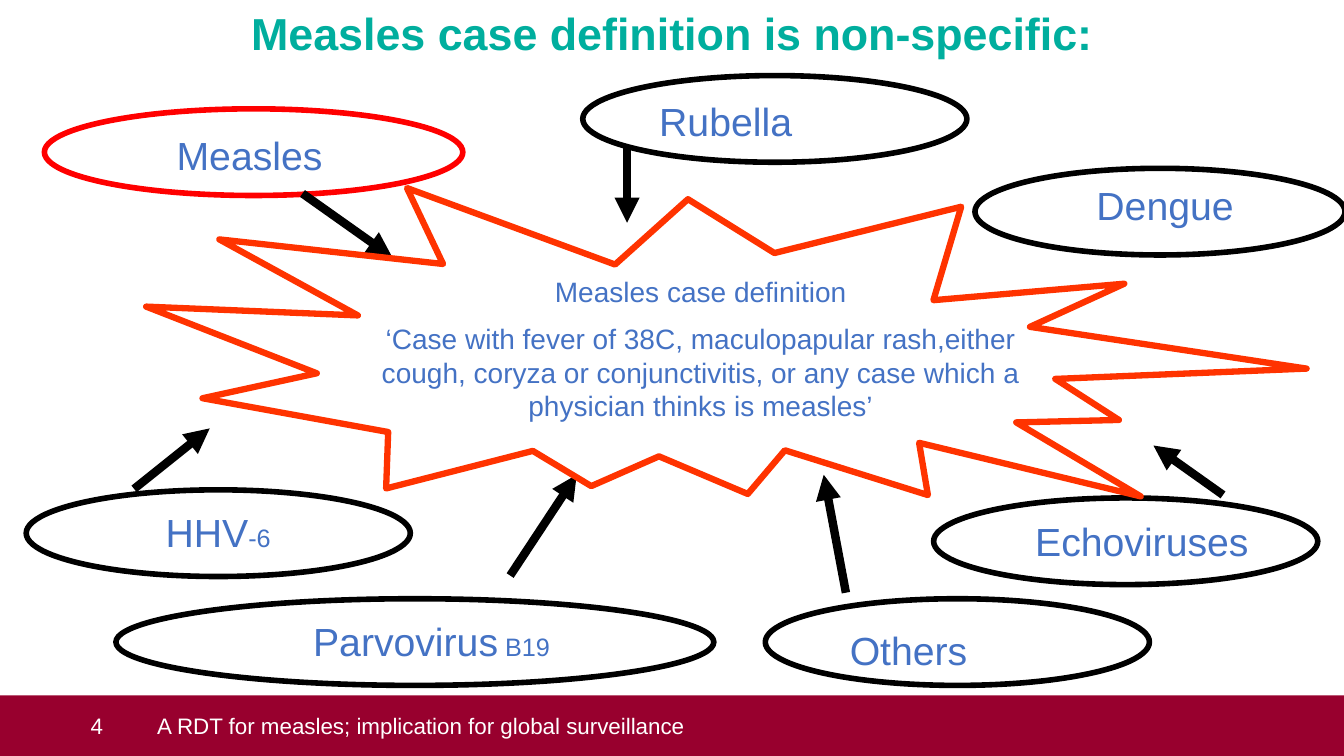
"""Build the slide on the non-specific measles case definition."""
from lxml import etree
from pptx import Presentation
from pptx.dml.color import RGBColor
from pptx.enum.shapes import MSO_CONNECTOR, MSO_SHAPE
from pptx.enum.text import MSO_ANCHOR, MSO_AUTO_SIZE, PP_ALIGN
from pptx.oxml.ns import qn
from pptx.util import Inches, Pt

OVAL, BURST, BAR = MSO_SHAPE.OVAL, MSO_SHAPE.EXPLOSION2, MSO_SHAPE.RECTANGLE
STRAIGHT = MSO_CONNECTOR.STRAIGHT
LEFT, CENTER = PP_ALIGN.LEFT, PP_ALIGN.CENTER
TOP, MIDDLE = MSO_ANCHOR.TOP, MSO_ANCHOR.MIDDLE
NO_AUTOFIT = MSO_AUTO_SIZE.NONE

FONT = "Arial"
COLORS = {
    "title": "00AE9E", "text": "4472C4", "outline": "000000",
    "measles": "FF0000", "burst": "FF3300", "footer": "98002E",
    "footer_text": "FFFFFF",
}
TITLE = "Measles case definition is non-specific:"
DEFINITION = [
    "Measles case definition",
    "‘Case with fever of 38C, maculopapular rash,either cough, coryza or "
    "conjunctivitis, or any case which a physician thinks is measles’",
]
PAGE_NUMBER = "4"
FOOTER = "A RDT for measles; implication for global surveillance"

# name, suffix, outline colour, oval (left, top, width), label (left, top, width), alignment
DISEASES = [
    ("Rubella", "", "outline", (5.78, 0.75, 3.81), (6.44, 0.92, 2.46), LEFT),
    ("Echoviruses", "", "outline", (9.26, 4.94, 3.81), (9.32, 5.08, 4.01), CENTER),
    ("Parvovirus", " B19", "outline", (1.15, 5.94, 5.93), (1.66, 6.08, 5.24), CENTER),
    ("Dengue", "", "outline", (9.67, 1.67, 3.67), (10.11, 1.75, 2.89), CENTER),
    ("Measles", "", "measles", (0.44, 1.08, 4.15), (0.64, 1.25, 3.67), CENTER),
    ("HHV", "-6", "outline", (0.26, 4.86, 3.81), (0.55, 4.99, 3.23), CENTER),
    ("Others", "", "outline", (7.59, 5.94, 3.81), (8.33, 6.16, 2.46), LEFT),
]
OVAL_HEIGHT, LABEL_HEIGHT = 0.86, 0.56
ARROWS = [
    ((6.22, 1.46), (6.22, 2.21)),
    ((5.06, 5.71), (5.72, 4.71)),
    ((8.39, 5.88), (8.17, 4.71)),
    ((3, 1.92), (3.89, 2.55)),
    ((12.13, 4.91), (11.44, 4.42)),
    ((1.33, 4.85), (2.08, 4.25)),
]


def rgb(color):
    return RGBColor.from_string(COLORS[color])


def add_run(paragraph, text, size, color, bold=False):
    run = paragraph.add_run()
    run.text = text
    run.font.name, run.font.size, run.font.bold = FONT, Pt(size), bold
    run.font.color.rgb = rgb(color)


def prepare(frame, anchor=TOP, insets=(0.1, 0.05, 0.1, 0.05)):
    frame.word_wrap, frame.auto_size = True, NO_AUTOFIT
    frame.vertical_anchor = anchor
    (frame.margin_left, frame.margin_top,
     frame.margin_right, frame.margin_bottom) = map(Inches, insets)
    return frame


def add_text_frame(slide, box, **layout):
    return prepare(slide.shapes.add_textbox(*map(Inches, box)).text_frame, **layout)


def add_outline(slide, kind, box, color, width):
    shape = slide.shapes.add_shape(kind, *map(Inches, box))
    shape.shadow.inherit = False
    shape.fill.background()
    shape.line.color.rgb, shape.line.width = rgb(color), Pt(width)
    return shape


def add_arrow(slide, start, end):
    arrow = slide.shapes.add_connector(STRAIGHT, *map(Inches, start + end))
    arrow.line.color.rgb, arrow.line.width = rgb("outline"), Pt(6)
    etree.SubElement(arrow.line._get_or_add_ln(), qn("a:tailEnd"), type="triangle")
    etree.SubElement(arrow._element.spPr, qn("a:effectLst"))


def add_title(slide):
    title = slide.shapes.title
    title.left, title.top, title.width, title.height = map(Inches, (2.39, 0.01, 8.74, 0.64))
    paragraph = prepare(title.text_frame).paragraphs[0]
    paragraph.alignment = LEFT
    add_run(paragraph, TITLE, 32, "title", bold=True)


def add_definition(slide):
    frame = add_text_frame(slide, (3.33, 2.67, 7.24, 1.61))
    for index, sentence in enumerate(DEFINITION):
        paragraph = frame.add_paragraph() if index else frame.paragraphs[0]
        paragraph.alignment = CENTER
        paragraph.space_before = Pt(10 if index else 0)
        add_run(paragraph, sentence, 20, "text")


def add_disease(slide, name, suffix, color, oval, label, alignment):
    add_outline(slide, OVAL, (*oval, OVAL_HEIGHT), color, 4)
    paragraph = add_text_frame(slide, (*label, LABEL_HEIGHT)).paragraphs[0]
    paragraph.alignment = alignment
    add_run(paragraph, name, 28, "text")
    if suffix:
        add_run(paragraph, suffix, 18, "text")


def add_footer(slide):
    bar = slide.shapes.add_shape(BAR, *map(Inches, (0, 6.9, 13.33, 0.6)))
    bar.shadow.inherit = False
    bar.fill.solid()
    bar.fill.fore_color.rgb = rgb("footer")
    bar.line.fill.background()
    number = prepare(bar.text_frame, MIDDLE, (0.9, 0, 0.1, 0)).paragraphs[0]
    number.alignment = LEFT
    add_run(number, PAGE_NUMBER, 16, "footer_text")
    caption = add_text_frame(slide, (1.31, 6.9, 11.76, 0.6), anchor=MIDDLE,
                             insets=(0.25, 0, 0, 0)).paragraphs[0]
    add_run(caption, FOOTER, 16, "footer_text")


def main():
    deck = Presentation()
    deck.slide_width, deck.slide_height = Inches(13.33), Inches(7.5)
    slide = deck.slides.add_slide(deck.slide_layouts[5])
    add_title(slide)
    add_definition(slide)
    for disease in DISEASES:
        add_disease(slide, *disease)
    for start, end in ARROWS:
        add_arrow(slide, start, end)
    burst = add_outline(slide, BURST, (1.44, 1.73, 11.48, 3.58), "burst", 4.5)
    burst.rotation = 8.2
    add_footer(slide)
    deck.save("out.pptx")


if __name__ == "__main__":
    main()
